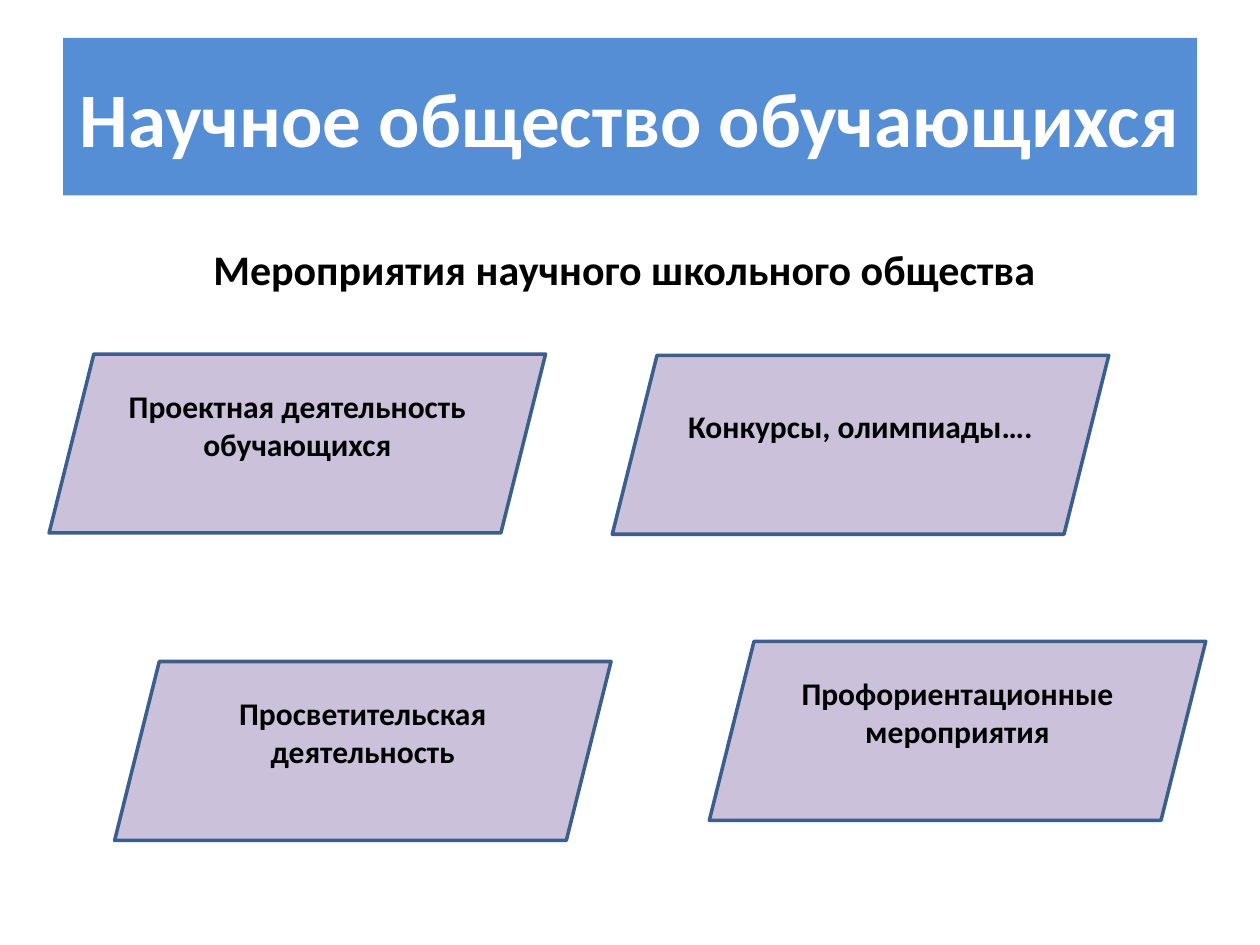
from pptx import Presentation
from pptx.dml.color import RGBColor
from pptx.enum.shapes import MSO_SHAPE
from pptx.enum.text import MSO_ANCHOR, PP_ALIGN
from pptx.util import Inches, Pt

COLORS = {"banner": "558ED5", "card": "CCC1DA", "outline": "3A5F8C",
          "light": "FFFFFF", "dark": "000000"}
CARD_W, CARD_H = 3.94, 1.42
ACTIVITIES = [
    ("Проектная деятельность обучающихся", 0.39, 2.81),
    ("Конкурсы, олимпиады….", 4.86, 2.82),
    ("Просветительская деятельность", 0.91, 5.25),
    ("Профориентационные мероприятия", 5.63, 5.09),
]


def rgb(name):
    return RGBColor.from_string(COLORS[name])


def place(sp, box):
    for name, value in zip(("left", "top", "width", "height"), box):
        setattr(sp, name, Inches(value))


def fill(sp, color):
    sp.fill.solid()
    sp.fill.fore_color.rgb = rgb(color)


def write(sp, text, size, color, anchor=MSO_ANCHOR.MIDDLE):
    tf = sp.text_frame
    tf.word_wrap = True
    tf.vertical_anchor = anchor
    p = tf.paragraphs[0]
    p.alignment = PP_ALIGN.CENTER
    r = p.add_run()
    r.text = text
    for name, value in {"name": "Calibri", "size": Pt(size), "bold": True}.items():
        setattr(r.font, name, value)
    r.font.color.rgb = rgb(color)


def add_banner(s, box):
    sp = s.shapes.title
    place(sp, box)
    fill(sp, "banner")
    write(sp, "Научное общество обучающихся", 44, "light")


def add_subtitle(s, box):
    sp = s.placeholders[1]
    place(sp, box)
    write(sp, "Мероприятия научного школьного общества", 24, "dark", MSO_ANCHOR.BOTTOM)


def add_activity(s, box, text):
    sp = s.shapes.add_shape(MSO_SHAPE.PARALLELOGRAM, *map(Inches, box))
    sp.shadow.inherit = False
    fill(sp, "card")
    sp.line.color.rgb = rgb("outline")
    sp.line.width = Pt(2)
    sp.text_frame.margin_bottom = Inches(0.35)
    write(sp, text, 18, "dark")


def main():
    prs = Presentation()
    prs.slide_width, prs.slide_height = Inches(10), Inches(7.5)
    s = prs.slides.add_slide(prs.slide_layouts.get_by_name("Comparison"))
    add_banner(s, (0.5, 0.3, 9, 1.25))
    add_subtitle(s, (0.5, 1.68, 8.91, 0.7))
    for sp in list(s.placeholders):
        if not sp.text_frame.text:
            sp.element.getparent().remove(sp.element)
    for text, left, top in ACTIVITIES:
        add_activity(s, (left, top, CARD_W, CARD_H), text)
    prs.save("out.pptx")


if __name__ == "__main__":
    main()
